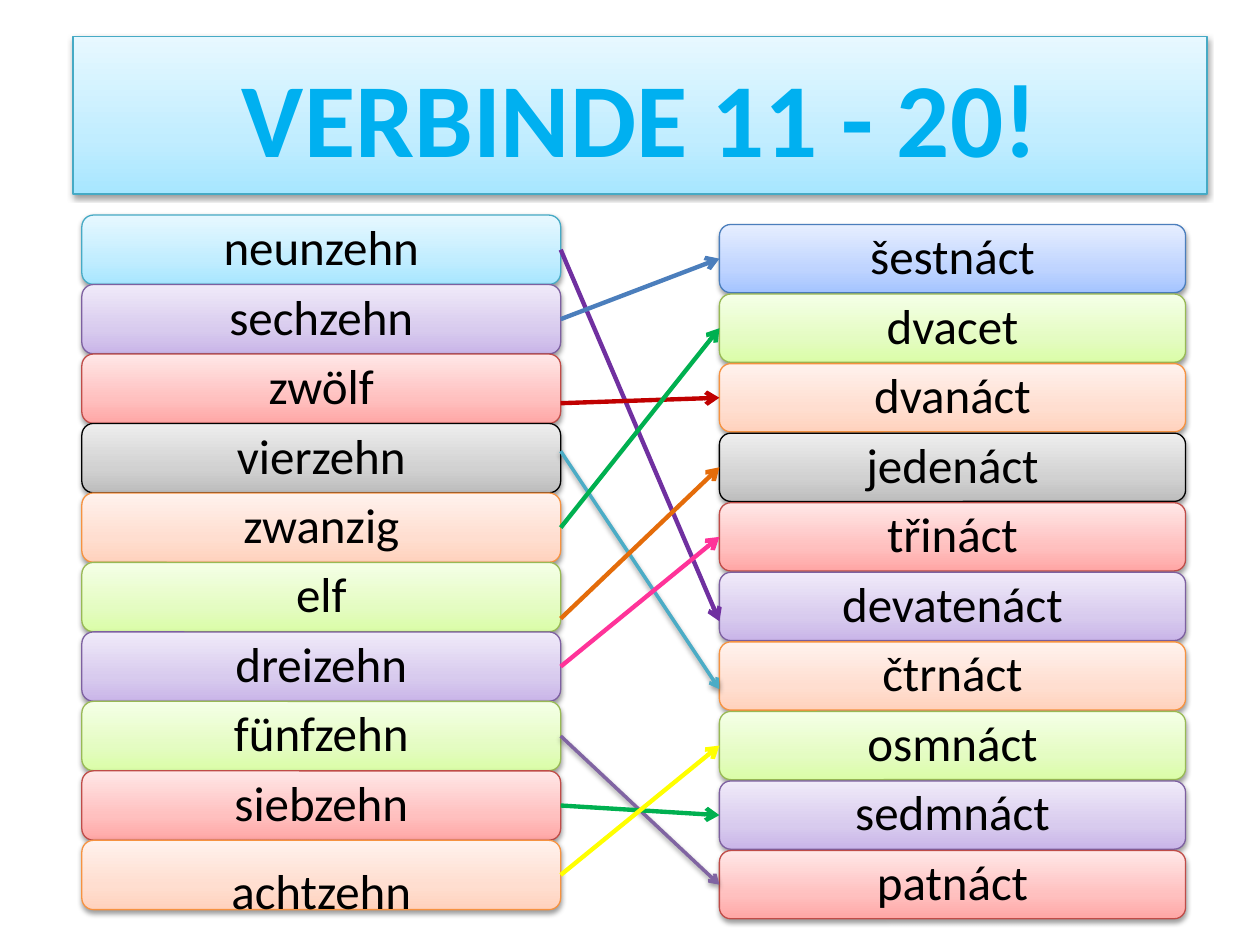
"""Build a German and Czech number matching slide with linked word tiles."""
from copy import deepcopy
from typing import Any, NamedTuple

from lxml import etree
from pptx import Presentation
from pptx import util as u
from pptx.dml.color import RGBColor
from pptx.enum import shapes, text
from pptx.oxml import ns


class Tone(NamedTuple):
    border: str
    stops: tuple[str, str, str]


class Column(NamedTuple):
    left: float
    top: float
    width: float
    height: float
    pitch: float
    words: list[tuple[str, str]]


class Link(NamedTuple):
    german: str
    czech: str
    start_y: float
    end_y: float
    color: str
    width: float = 2.5
    shadow: bool = False


TONES = {
    "aqua": Tone("46AAC5", ("A7E6FF", "C1EDFF", "E7F8FF")),
    "violet": Tone("7D60A0", ("C9B5E8", "D8CBEE", "F0EAF9")),
    "red": Tone("BF4C48", ("FFA6A5", "FFC0BF", "FFE7E7")),
    "grey": Tone("000000", ("BDBDBD", "D1D1D1", "EEEEEE")),
    "orange": Tone("F69240", ("FFD2BD", "FFDED0", "FFF2ED")),
    "green": Tone("98B955", ("DAFDA7", "E4FCC2", "F5FFE7")),
    "blue": Tone("4B7EBC", ("A4C4FF", "BFD4FF", "E6EEFF")),
}
GERMAN = Column(46.8, 122.9, 273.6, 39.6, 39.7, [
    ("neunzehn", "aqua"), ("sechzehn", "violet"), ("zwölf", "red"),
    ("vierzehn", "grey"), ("zwanzig", "orange"), ("elf", "green"),
    ("dreizehn", "violet"), ("fünfzehn", "green"), ("siebzehn", "red"),
    ("achtzehn", "orange"),
])
CZECH = Column(411.1, 128.3, 266.4, 39, 39.75, [
    ("šestnáct", "blue"), ("dvacet", "green"), ("dvanáct", "orange"),
    ("jedenáct", "grey"), ("třináct", "red"), ("devatenáct", "violet"),
    ("čtrnáct", "orange"), ("osmnáct", "green"), ("sedmnáct", "violet"),
    ("patnáct", "red"),
])
LINKS = [
    Link("neunzehn", "devatenáct", 145.4, 355, "7030A0"),
    Link("sechzehn", "šestnáct", 185, 145.4, "4B7EBC"),
    Link("zwölf", "dvanáct", 230.4, 230.4, "C00000"),
    Link("vierzehn", "čtrnáct", 257.8, 393.8, "4BACC6", 2, True),
    Link("zwanzig", "dvacet", 303.8, 185, "00B050"),
    Link("elf", "jedenáct", 353.5, 264.2, "E46C0A"),
    Link("dreizehn", "třináct", 383, 303.8, "FF3399"),
    Link("fünfzehn", "patnáct", 423.4, 508.3, "8064A2", 2, True),
    Link("siebzehn", "sedmnáct", 461.5, 465.8, "00B050"),
    Link("achtzehn", "osmnáct", 496.8, 423.4, "FFFF00"),
]
WORD_FONT = {"name": "Calibri", "size": u.Pt(28), "bold": False}
TITLE_FONT = {"name": "Calibri", "size": u.Pt(60), "bold": True}
FRAME = {
    "word_wrap": True, "vertical_anchor": text.MSO_ANCHOR.MIDDLE,
    "margin_left": u.Pt(8.64), "margin_right": u.Pt(8.64),
    "margin_top": 0, "margin_bottom": 0,
}
JOIN_REACH = u.Pt(4)


def rgb(value: str) -> RGBColor:
    """Turn a hex string into a colour."""
    return RGBColor.from_string(value)


def apply(target: Any, values: dict[str, Any]) -> None:
    """Set each named format value on the target."""
    for name, value in values.items():
        setattr(target, name, value)


def add_effects(properties: Any, visible: bool) -> None:
    """Replace the theme effects with a soft shadow or with none."""
    effects = etree.SubElement(properties, ns.qn("a:effectLst"))
    if visible:
        shadow = etree.SubElement(effects, ns.qn("a:outerShdw"), blurRad=str(u.Pt(3.1)),
                                  dist=str(u.Pt(1.6)), dir="5400000", rotWithShape="0")
        black = etree.SubElement(shadow, ns.qn("a:srgbClr"), val="000000")
        etree.SubElement(black, ns.qn("a:alpha"), val="38000")


def fill_gradient(panel: Any, colors: tuple[str, str, str]) -> None:
    """Fill the panel with a gradient rising from its bottom edge."""
    panel.fill.gradient()
    panel.fill.gradient_angle = 90
    stop_list = panel._element.spPr.find(".//" + ns.qn("a:gsLst"))
    stop_list.append(deepcopy(stop_list[-1]))
    for stop, color, position in zip(panel.fill.gradient_stops, colors, (0, 0.35, 1)):
        stop.color.rgb = rgb(color)
        stop.position = position


def add_panel(slide: Any, preset: Any, box: tuple[float, ...], tone: Tone, label: str,
              font: dict[str, Any], ink: str, spacing: float, drop: float = 0) -> Any:
    """Draw a labelled gradient panel, its label lowered by drop."""
    panel = slide.shapes.add_shape(preset, *(u.Pt(length) for length in box))
    fill_gradient(panel, tone.stops)
    panel.line.color.rgb = rgb(tone.border)
    panel.line.width = u.Pt(0.75)
    add_effects(panel._element.spPr, True)
    apply(panel.text_frame, FRAME | {"margin_top": u.Pt(2 * drop)})
    paragraph = panel.text_frame.paragraphs[0]
    apply(paragraph, {"alignment": text.PP_ALIGN.CENTER, "line_spacing": spacing})
    run = paragraph.add_run()
    run.text = label
    apply(run.font, font)
    run.font.color.rgb = rgb(ink)
    return panel


def add_column(slide: Any, column: Column) -> dict[str, Any]:
    """Draw a column of word tiles and return them by word."""
    tiles = {}
    for row, (word, tone) in enumerate(column.words):
        box = (column.left, column.top + row * column.pitch, column.width, column.height)
        drop = 10.8 if word == "achtzehn" else 0
        tiles[word] = add_panel(slide, shapes.MSO_SHAPE.ROUNDED_RECTANGLE, box, TONES[tone],
                                word, WORD_FONT, "000000", 0.9, drop)
    return tiles


def add_link(slide: Any, link: Link, tiles: dict[str, Any]) -> None:
    """Draw an arrow between two tiles, joined where it meets a side's middle."""
    german, czech = tiles[link.german], tiles[link.czech]
    start_y, end_y = u.Pt(link.start_y), u.Pt(link.end_y)
    arrow = slide.shapes.add_connector(shapes.MSO_CONNECTOR.STRAIGHT,
                                       german.left + german.width, start_y, czech.left, end_y)
    if abs(german.top + german.height // 2 - start_y) < JOIN_REACH:
        arrow.begin_connect(german, 3)
    if abs(czech.top + czech.height // 2 - end_y) < JOIN_REACH:
        arrow.end_connect(czech, 1)
    arrow.line.color.rgb = rgb(link.color)
    arrow.line.width = u.Pt(link.width)
    etree.SubElement(arrow.line._get_or_add_ln(), ns.qn("a:tailEnd"), type="arrow")
    add_effects(arrow._element.spPr, link.shadow)


def main() -> None:
    """Build and save the slide."""
    deck = Presentation()
    apply(deck, {"slide_width": u.Pt(720), "slide_height": u.Pt(540)})
    slide = deck.slides.add_slide(deck.slide_layouts[6])
    add_panel(slide, shapes.MSO_SHAPE.RECTANGLE, (41.8, 20.9, 648, 90), TONES["aqua"],
              "VERBINDE 11 - 20!", TITLE_FONT, "00B0F0", 1)
    tiles = add_column(slide, GERMAN) | add_column(slide, CZECH)
    for link in LINKS:
        add_link(slide, link, tiles)
    deck.save("out.pptx")


if __name__ == "__main__":
    main()
